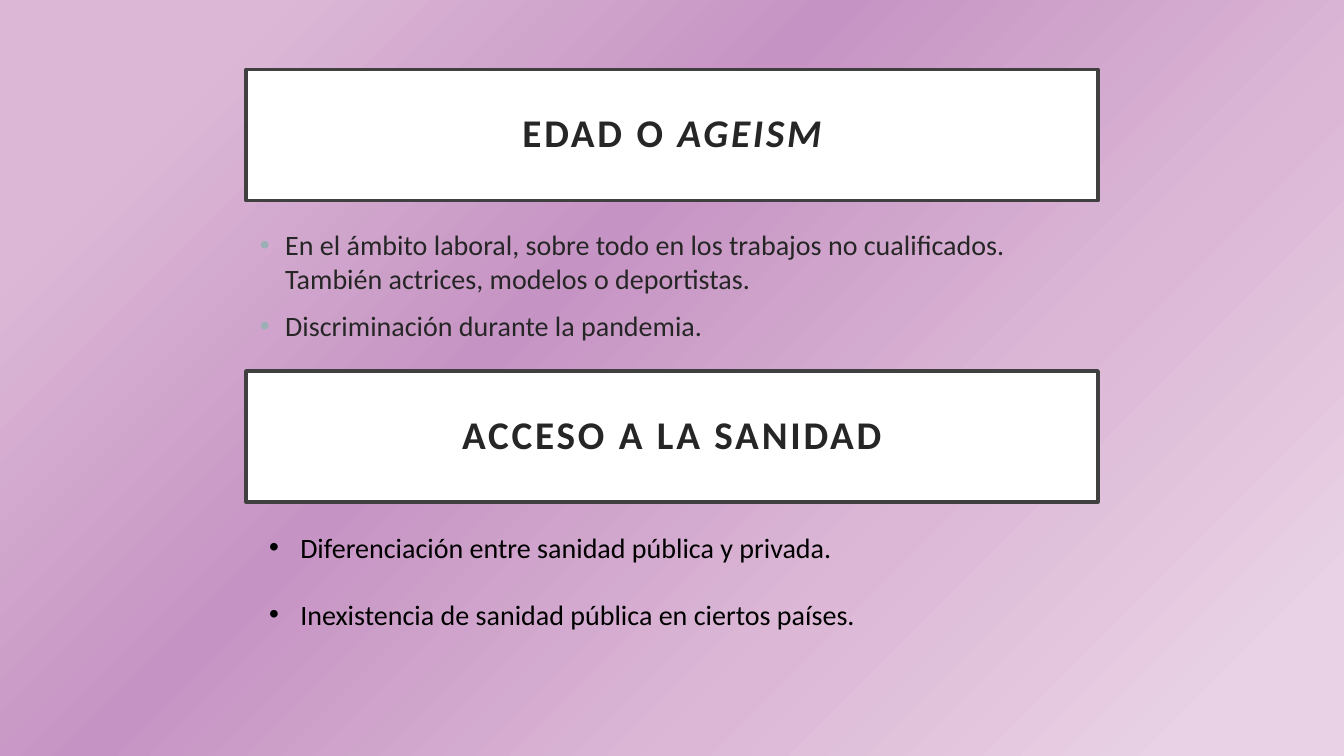
from lxml import etree
from pptx import Presentation, util as u
from pptx.dml.color import RGBColor
from pptx.enum import shapes, text
from pptx.oxml.ns import qn

WIDTH, HEIGHT = 13.33, 7.5
FONT = "Calibri"
COLORS = {
    "white": "FFFFFF", "frame": "404040", "ink": "262626", "black": "000000",
    "bullet": "9BAFB5", "pale": "E9D2E5", "pink": "DCB8D6", "mauve": "C694C4",
}
GRADIENT = [(8, "pale"), (32, "pink"), (60, "mauve"), (87, "pink")]

# Heading frames share one column and one size
FRAME_LEFT, FRAME_WIDTH, FRAME_HEIGHT = 2.44, 8.45, 1.3


def color(name):
    return RGBColor.from_string(COLORS[name])


def add_element(parent, tag, **attributes):
    element = etree.SubElement(parent, qn(tag))
    for name, value in attributes.items():
        element.set(name, str(value))
    return element


def place(shape, left, top, width, height):
    shape.left, shape.top = u.Inches(left), u.Inches(top)
    shape.width, shape.height = u.Inches(width), u.Inches(height)


def set_background(slide):
    """Fill the background with a gradient that spreads from the lower right corner."""
    slide.background.fill.gradient()
    gradient = slide.background._cSld.find(".//" + qn("a:gradFill"))
    for child in list(gradient):
        gradient.remove(child)
    stops = add_element(gradient, "a:gsLst")
    for position, name in GRADIENT:
        stop = add_element(stops, "a:gs", pos=position * 1000)
        add_element(stop, "a:srgbClr", val=COLORS[name])
    spread = add_element(gradient, "a:path", path="circle")
    add_element(spread, "a:fillToRect", l=100000, t=100000)


def add_run(paragraph, words, size, ink):
    run = paragraph.add_run()
    run.text = words
    run.font.name, run.font.size = FONT, u.Pt(size)
    run.font.color.rgb = color(ink)
    return run


def format_heading(shape, top, parts):
    """Draw a framed heading; parts are (words, italic) pairs."""
    place(shape, FRAME_LEFT, top, FRAME_WIDTH, FRAME_HEIGHT)
    shape.fill.solid()
    shape.fill.fore_color.rgb = color("white")
    shape.line.color.rgb = color("frame")
    shape.line.width = u.Pt(2.5)
    frame = shape.text_frame
    frame.word_wrap = True
    frame.auto_size = text.MSO_AUTO_SIZE.NONE
    frame.vertical_anchor = text.MSO_ANCHOR.MIDDLE
    frame.margin_left = frame.margin_right = u.Inches(0.2)
    frame.margin_top = frame.margin_bottom = u.Inches(0.2)
    paragraph = frame.paragraphs[0]
    paragraph.alignment = text.PP_ALIGN.CENTER
    paragraph.line_spacing = 0.9
    for words, italic in parts:
        run = add_run(paragraph, words, 28, "ink")
        run.font.bold, run.font.italic = True, italic
        run.font._element.set("spc", "200")


def add_bullets(slide, box, items, indent, gap, ink, bullet):
    """Add a bulleted list with a gap in points between its items."""
    shape = slide.shapes.add_textbox(0, 0, 0, 0)
    place(shape, *box)
    frame = shape.text_frame
    frame.word_wrap = True
    for index, words in enumerate(items):
        paragraph = frame.paragraphs[0] if index == 0 else frame.add_paragraph()
        properties = paragraph._p.get_or_add_pPr()
        properties.set("marL", str(u.Inches(indent)))
        properties.set("indent", str(-u.Inches(indent)))
        add_element(add_element(properties, "a:buClr"), "a:srgbClr", val=COLORS[bullet])
        add_element(properties, "a:buFont", typeface="Arial")
        add_element(properties, "a:buChar", char="•")
        if index:
            paragraph.space_before = u.Pt(gap)
        add_run(paragraph, words, 20, ink)


def main():
    presentation = Presentation()
    presentation.slide_width = u.Inches(WIDTH)
    presentation.slide_height = u.Inches(HEIGHT)
    slide = presentation.slides.add_slide(presentation.slide_layouts[5])
    set_background(slide)

    # Age
    format_heading(slide.shapes.title, 0.69, [("EDAD O ", False), ("AGEISM", True)])
    add_bullets(slide, (2.48, 2.21, FRAME_WIDTH, 1.4), [
        "En el ámbito laboral, sobre todo en los trabajos no cualificados. "
        "También actrices, modelos o deportistas.",
        "Discriminación durante la pandemia.",
    ], indent=0.25, gap=10, ink="ink", bullet="bullet")

    # Access to health care
    heading = slide.shapes.add_shape(shapes.MSO_SHAPE.RECTANGLE, 0, 0, 0, 0)
    heading.shadow.inherit = False
    format_heading(heading, 3.68, [("ACCESO A LA SANIDAD", False)])
    add_bullets(slide, (2.57, 5.21, 8.37, 1.41), [
        "Diferenciación entre sanidad pública y privada.",
        "Inexistencia de sanidad pública en ciertos países.",
    ], indent=0.31, gap=24, ink="black", bullet="black")

    presentation.save("out.pptx")


if __name__ == "__main__":
    main()
